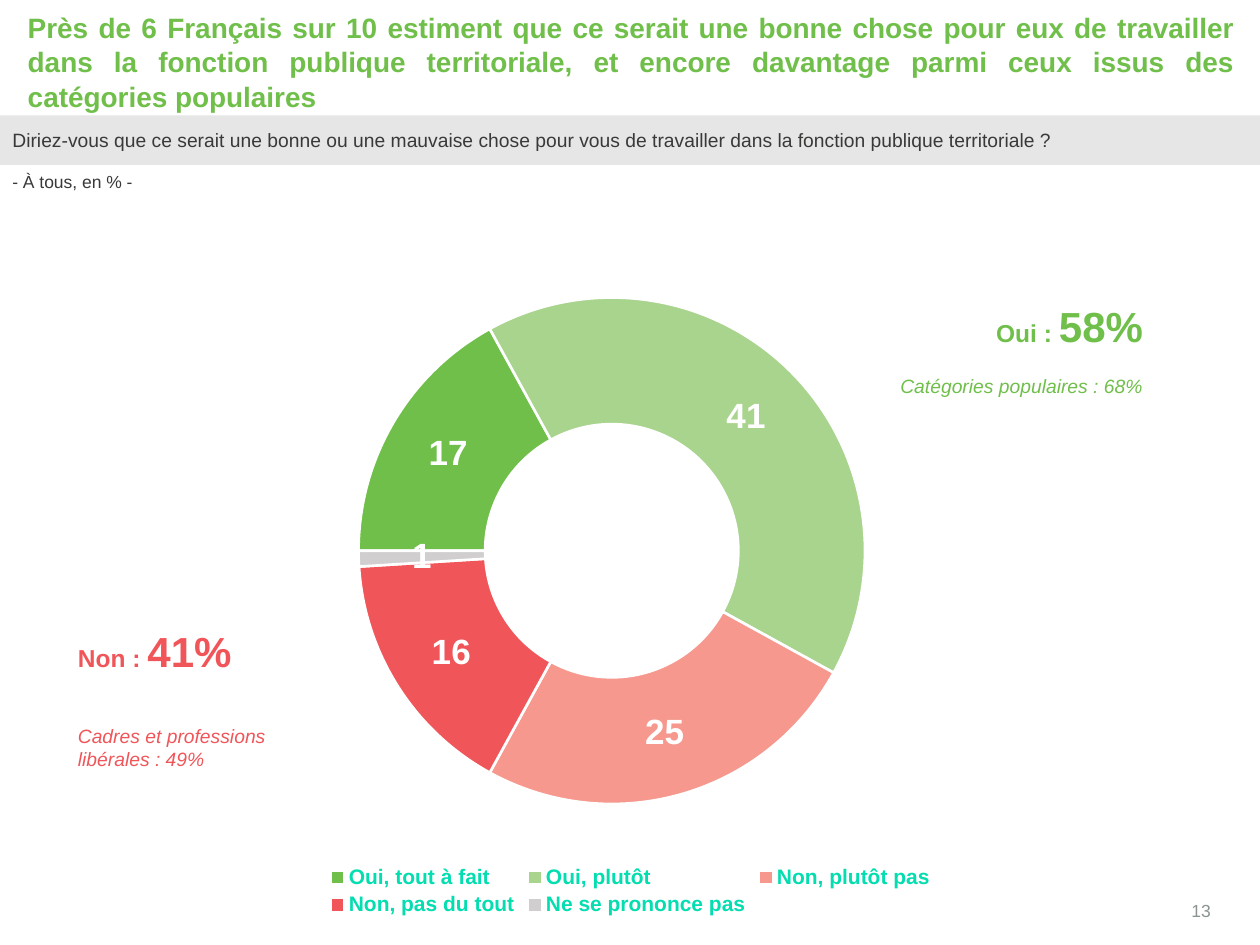
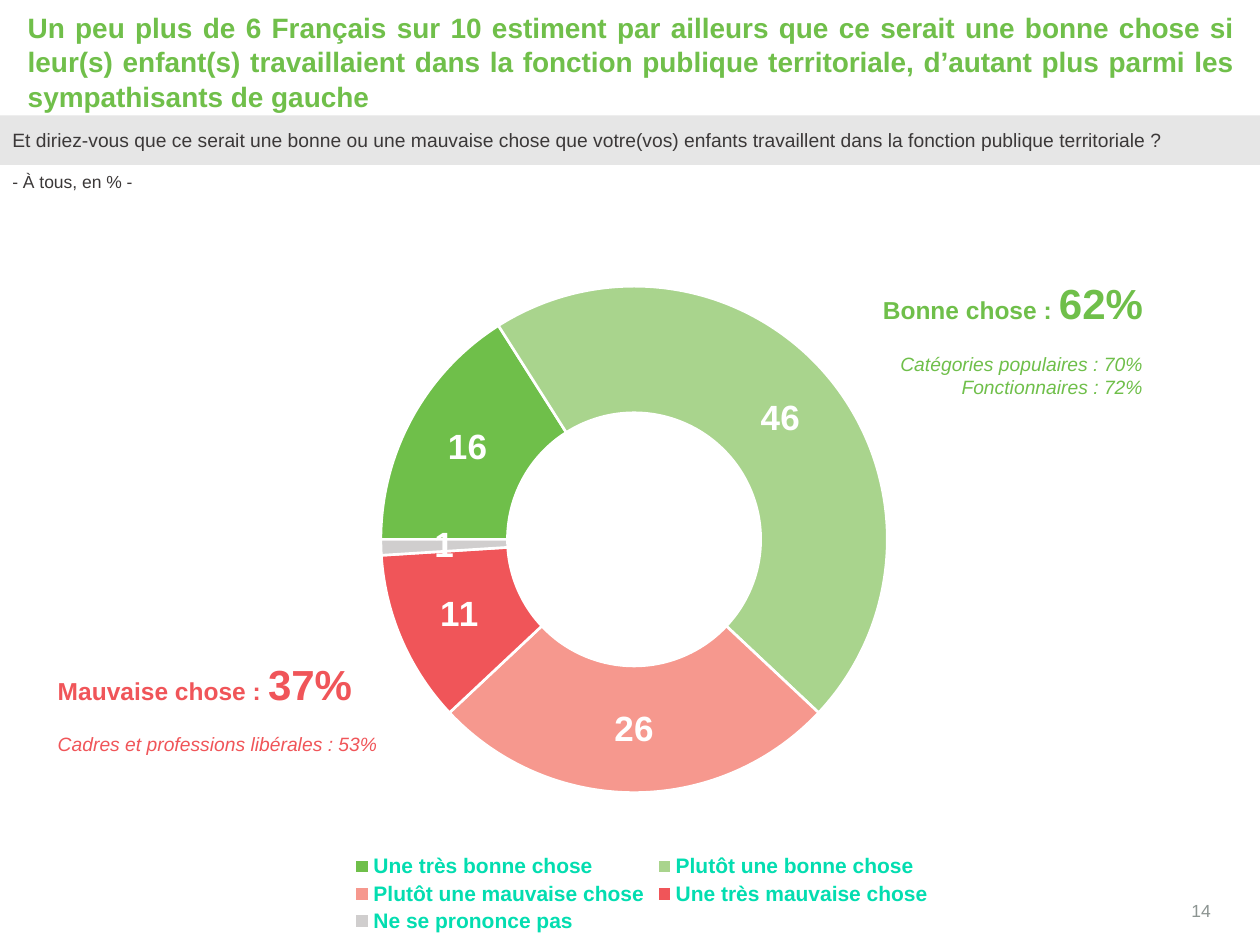
"""Build two survey slides, each with a doughnut chart and two callouts."""
from dataclasses import dataclass
from typing import NamedTuple

from lxml.etree import SubElement
from pptx import Presentation
from pptx.chart.data import CategoryChartData
from pptx.dml.color import RGBColor
from pptx.enum.chart import XL_CHART_TYPE, XL_LEGEND_POSITION
from pptx.enum.shapes import MSO_SHAPE
from pptx.enum.text import MSO_ANCHOR, PP_ALIGN
from pptx.oxml.ns import qn
from pptx.util import Pt

HUES = {"title": "70BF4A", "yes": "6FBF4A", "mild": "A9D48D", "doubt": "F6988E",
        "no": "F05559", "none": "D0CECE", "band": "E6E6E6", "ink": "3B3838",
        "page": "8C9491", "key": "03DDB0", "chart": "014537", "white": "FFFFFF"}
SLICES = ("yes", "mild", "doubt", "no", "none")
INSET = (7.2, 3.6, 7.2, 3.6)
BARE = (0, 0, 0, 0)
SIDES = ("margin_left", "margin_top", "margin_right", "margin_bottom")


class Place(NamedTuple):
    left: float
    top: float
    width: float
    height: float


class Run(NamedTuple):
    text: str
    size: float
    hue: str
    bold: bool = False
    slant: bool = False


class Para(NamedTuple):
    runs: list[Run]
    before: float = 0
    lines: float = 1


@dataclass
class Callout:
    place: Place
    hue: str
    label: str
    share: str
    notes: list[str]
    gap: float = 13.8
    align: PP_ALIGN = PP_ALIGN.LEFT


@dataclass
class Page:
    title: str
    query: str
    number: str
    place: Place
    plot: Place
    names: list[str]
    counts: list[int]
    calls: list[Callout]


def put(thing: object, values: dict) -> None:
    """Set each named value on the given object."""
    for name, value in values.items():
        setattr(thing, name, value)


def style(font, size: float, hue: str, bold: bool = False, slant: bool = False) -> None:
    """Give a font its face, size, weight and colour."""
    put(font, {"name": "Arial", "size": Pt(size), "bold": bold, "italic": slant})
    font.color.rgb = RGBColor.from_string(HUES[hue])


def paint(fill, hue: str) -> None:
    """Fill with one plain colour."""
    fill.solid()
    fill.fore_color.rgb = RGBColor.from_string(HUES[hue])


def write(shape, paras: list[Para], align=PP_ALIGN.LEFT, anchor=MSO_ANCHOR.MIDDLE,
          inset: tuple = INSET) -> None:
    """Write paragraphs into a shape."""
    frame = shape.text_frame
    put(frame, {"word_wrap": True, "vertical_anchor": anchor})
    put(frame, {side: Pt(size) for side, size in zip(SIDES, inset)})
    for rank, para in enumerate(paras):
        block = frame.add_paragraph() if rank else frame.paragraphs[0]
        put(block, {"alignment": align, "line_spacing": para.lines})
        if para.before:
            block.space_before = Pt(para.before)
        for run in para.runs:
            piece = block.add_run()
            piece.text = run.text
            style(piece.font, *run[1:])


def add_text(slide, place: Place, paras: list[Para], **format) -> None:
    """Add a text box."""
    write(slide.shapes.add_textbox(*map(Pt, place)), paras, **format)


def add_ring(slide, page: Page) -> None:
    """Add the doughnut chart with its legend."""
    data = CategoryChartData()
    data.categories = page.names
    data.add_series("Series 1", page.counts)
    chart = slide.shapes.add_chart(XL_CHART_TYPE.DOUGHNUT, *map(Pt, page.place), data).chart
    put(chart, {"has_title": False, "has_legend": True})
    style(chart.font, 10, "chart")
    put(chart.legend, {"position": XL_LEGEND_POSITION.BOTTOM, "include_in_layout": False})
    style(chart.legend.font, 12, "key", True)
    plot = chart.plots[0]
    put(plot, {"vary_by_categories": True, "has_data_labels": True})
    put(plot.data_labels, {"show_value": True, "show_percentage": False,
                           "show_category_name": False, "show_legend_key": False})
    style(plot.data_labels.font, 20, "white", True)
    for rank, hue in enumerate(SLICES):
        form = plot.series[0].points[rank].format
        paint(form.fill, hue)
        paint(form.line.fill, "white")
        form.line.width = Pt(1.5)
    root = chart.element
    root.find(".//" + qn("c:firstSliceAng")).set("val", "270")
    area = root.find(".//" + qn("c:plotArea"))
    for old in area.findall(qn("c:layout")):
        area.remove(old)
    frame = SubElement(area, qn("c:layout"))
    area.insert(0, frame)
    manual = SubElement(frame, qn("c:manualLayout"))
    rules = {"layoutTarget": "inner", "xMode": "edge", "yMode": "edge",
             **dict(zip("xywh", page.plot))}
    for name, value in rules.items():
        SubElement(manual, qn("c:" + name)).set("val", str(value))


def add_call(slide, call: Callout) -> None:
    """Add a callout: a label with its share, then notes."""
    head = Para([Run(call.label, 14, call.hue, True), Run(call.share, 24, call.hue, True)])
    notes = [Para([Run(note, 11, call.hue, slant=True)], 0 if rank else call.gap)
             for rank, note in enumerate(call.notes)]
    add_text(slide, call.place, [head, *notes], align=call.align)


def add_page(deck, page: Page) -> None:
    """Add one whole slide."""
    slide = deck.slides.add_slide(deck.slide_layouts[6])
    add_text(slide, Place(15.84, 9.36, 689.76, 51.12),
             [Para([Run(page.title, 16, "title", True)], lines=1.04)],
             align=PP_ALIGN.JUSTIFY, inset=BARE)
    add_text(slide, Place(660.24, 509.04, 31.68, 17.28),
             [Para([Run(page.number, 10, "page")])],
             align=PP_ALIGN.RIGHT, anchor=MSO_ANCHOR.BOTTOM, inset=BARE)
    add_ring(slide, page)
    for call in page.calls:
        add_call(slide, call)
    band = slide.shapes.add_shape(MSO_SHAPE.RECTANGLE, *map(Pt, Place(0, 66, 720, 28.3)))
    band.shadow.inherit = False
    paint(band.fill, "band")
    band.line.fill.background()
    write(band, [Para([Run(page.query, 11, "ink")])],
          align=PP_ALIGN.JUSTIFY, inset=(7.2, 7.2, 14.4, 7.2))
    add_text(slide, Place(0, 94.3, 156.24, 19.44),
             [Para([Run("- À tous, en % -", 10, "ink")])], anchor=MSO_ANCHOR.TOP)


PAGES = [
    Page("Près de 6 Français sur 10 estiment que ce serait une bonne chose pour eux de "
         "travailler dans la fonction publique territoriale, et encore davantage parmi "
         "ceux issus des catégories populaires",
         "Diriez-vous que ce serait une bonne ou une mauvaise chose pour vous de "
         "travailler dans la fonction publique territoriale ?",
         "13", Place(98.64, 119.52, 523.44, 406.8), Place(0.203, 0.082, 0.553, 0.796),
         ["Oui, tout à fait", "Oui, plutôt", "Non, plutôt pas", "Non, pas du tout",
          "Ne se prononce pas"],
         [17, 41, 25, 16, 1],
         [Callout(Place(484.56, 165.6, 175.68, 67.68), "yes", "Oui : ", "58%",
                  ["Catégories populaires : 68%"], align=PP_ALIGN.RIGHT),
          Callout(Place(37.44, 365.04, 156.24, 67.68), "no", "Non : ", "41%",
                  ["Cadres et professions libérales : 49%"], gap=27.6)]),
    Page("Un peu plus de 6 Français sur 10 estiment par ailleurs que ce serait une bonne "
         "chose si leur(s) enfant(s) travaillaient dans la fonction publique "
         "territoriale, d’autant plus parmi les sympathisants de gauche",
         "Et diriez-vous que ce serait une bonne ou une mauvaise chose que votre(vos) "
         "enfants travaillent dans la fonction publique territoriale ?",
         "14", Place(105.12, 128.88, 523.44, 406.8), Place(0.215, 0.043, 0.553, 0.796),
         ["Une très bonne chose", "Plutôt une bonne chose", "Plutôt une mauvaise chose",
          "Une très mauvaise chose", "Ne se prononce pas"],
         [16, 46, 26, 11, 1],
         [Callout(Place(484.56, 159.12, 175.68, 67.68), "yes", "Bonne chose : ", "62%",
                  ["Catégories populaires : 70%", "Fonctionnaires : 72%"],
                  align=PP_ALIGN.RIGHT),
          Callout(Place(25.92, 370.08, 210.24, 67.68), "no", "Mauvaise chose : ", "37%",
                  ["Cadres et professions libérales : 53%"])]),
]


def main() -> None:
    """Build and save the deck."""
    deck = Presentation()
    put(deck, {"slide_width": Pt(720), "slide_height": Pt(540)})
    for page in PAGES:
        add_page(deck, page)
    deck.save("out.pptx")


if __name__ == "__main__":
    main()
